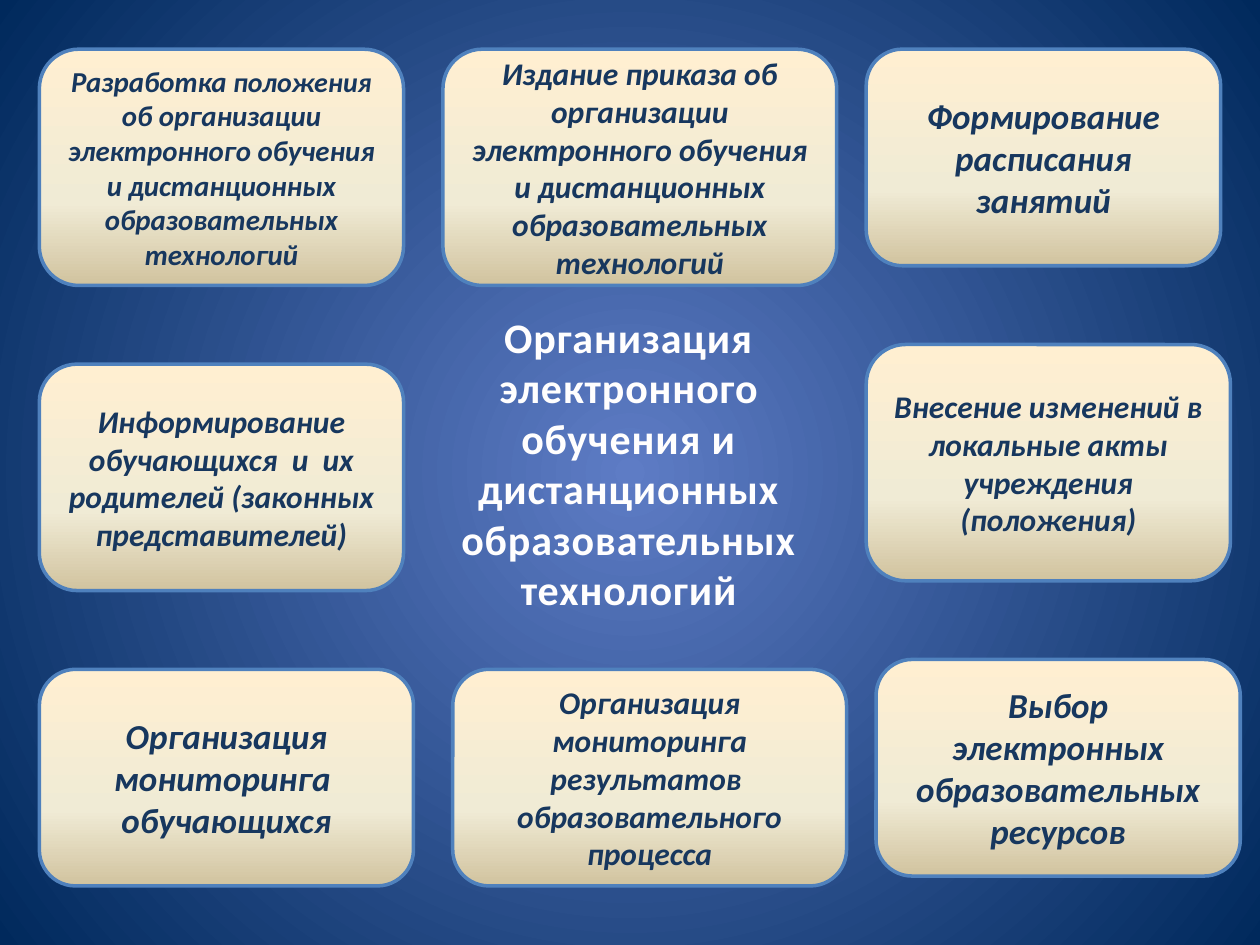
from lxml import etree
from pptx import Presentation
from pptx.dml.color import RGBColor
from pptx.enum.shapes import MSO_SHAPE as SHAPE
from pptx.enum.text import MSO_ANCHOR as ANCHOR, MSO_AUTO_SIZE as AUTO, PP_ALIGN as ALIGN
from pptx.oxml import parse_xml
from pptx.oxml.ns import nsdecls, qn
from pptx.util import Pt

CARD_STOPS = [(0, "FFEFD1"), (65, "F0EBD5"), (100, "D1C39F")]
PAGE_STOPS = [(0, "5E7CC5"), (100, "00295C")]
DOWN = '<a:lin {} ang="5400000" scaled="0"/>'
CIRCLE = '<a:path {} path="circle"><a:fillToRect l="50000" t="50000" r="50000" b="50000"/></a:path>'
OUTLINE = '<a:ln {} w="12700"><a:solidFill><a:srgbClr val="E78738"><a:alpha val="6500"/></a:srgbClr></a:solidFill></a:ln>'
GLOW = ('<a:effectLst {}><a:outerShdw blurRad="38100" dist="12700" dir="2700000">'
        '<a:srgbClr val="000000"><a:alpha val="40000"/></a:srgbClr></a:outerShdw></a:effectLst>')

CARDS = [
    (22.5, 28.13, 208.13, 135, [
        ("Разработка ", 16.5), ("положения", 16),
        (" об организации электронного обучения и дистанционных образовательных технологий", 16.5)]),
    (253.13, 28.13, 225, 135, [
        ("Издание приказа об организации электронного обучения и дистанционных образовательных технологий", 18)]),
    (495, 28.13, 202.5, 123.75, [("Формирование расписания занятий", 20)]),
    (22.5, 208.13, 208.13, 129.38, [
        ("Информирование обучающихся  и  их родителей (законных представителей)", 18)]),
    (495, 196.88, 208.13, 135, [("Внесение изменений в локальные акты учреждения (положения)", 18)]),
    (22.5, 382.5, 213.75, 123.75, [("Организация мониторинга  обучающихся", 20)]),
    (258.75, 382.5, 225, 123.75, [("Организация мониторинга результатов  образовательного процесса", 18)]),
    (500.63, 376.88, 208.13, 123.75, [("Выбор электронных образовательных ресурсов", 20)]),
]


def color(value):
    """Turn a hex string into a colour."""
    return RGBColor.from_string(value)


def xml(template):
    """Parse a drawing fragment with its namespace filled in."""
    return parse_xml(template.format(nsdecls("a")))


class Deck:
    """Style and current slide, with a method for each kind of element."""

    font, ink, edge, white = "Calibri", "17375E", "4F81BD", "FFFEFE"

    def __init__(self, width, height):
        """Start a presentation with one title-only slide."""
        self.prs = Presentation()
        self.prs.slide_width, self.prs.slide_height = Pt(width), Pt(height)
        self.s = self.prs.slides.add_slide(self.prs.slide_layouts[5])

    def gradient(self, fill, owner, stops, shade):
        """Fill the owner with the given stops and shading."""
        fill.gradient()
        grad = owner.xpath(".//a:gradFill")[0]
        for child in list(grad):
            grad.remove(child)
        gs_list = etree.SubElement(grad, qn("a:gsLst"))
        for percent, value in stops:
            gs = etree.SubElement(gs_list, qn("a:gs"), pos=str(percent * 1000))
            etree.SubElement(gs, qn("a:srgbClr"), val=value)
        grad.append(xml(shade))

    def background(self, stops, shade):
        """Set the slide background."""
        self.gradient(self.s.background.fill, self.s.element, stops, shade)

    def style(self, r, size, value, italic=False):
        """Format a run."""
        r.font.name, r.font.size = self.font, Pt(size)
        r.font.bold, r.font.italic = True, italic
        r.font.color.rgb = color(value)

    def title(self, left, top, width, height, lines, size):
        """Place the title with spaced, softly shadowed letters."""
        sp = self.s.shapes.title
        sp.left, sp.top, sp.width, sp.height = map(Pt, (left, top, width, height))
        tf = sp.text_frame
        tf.text = "\n".join(lines)
        tf.word_wrap, tf.auto_size = True, AUTO.SHAPE_TO_FIT_TEXT
        tf.vertical_anchor = ANCHOR.TOP
        for p in tf.paragraphs:
            p.alignment = ALIGN.CENTER
            for r in p.runs:
                self.style(r, size, self.white)
                props = r.font._element
                props.set("spc", "50")
                props.insert(0, xml(OUTLINE))
                props.find(qn("a:solidFill")).addnext(xml(GLOW))

    def card(self, left, top, width, height, parts):
        """Add a rounded card with centred text."""
        sp = self.s.shapes.add_shape(SHAPE.ROUNDED_RECTANGLE, *map(Pt, (left, top, width, height)))
        sp.shadow.inherit = False
        self.gradient(sp.fill, sp.element, CARD_STOPS, DOWN)
        sp.line.color.rgb, sp.line.width = color(self.edge), Pt(2)
        tf = sp.text_frame
        tf.word_wrap, tf.vertical_anchor = True, ANCHOR.MIDDLE
        p = tf.paragraphs[0]
        p.alignment = ALIGN.CENTER
        for text, size in parts:
            r = p.add_run()
            r.text = text
            self.style(r, size, self.ink, italic=True)


def main():
    """Build the slide."""
    deck = Deck(720, 540)
    deck.background(PAGE_STOPS, CIRCLE)
    for card in CARDS:
        deck.card(*card)
    deck.title(230.4, 174.4, 257.8, 181.4, [
        "Организация электронного",
        "обучения и дистанционных образовательных технологий"], 24)
    deck.prs.save("out.pptx")


if __name__ == "__main__":
    main()
